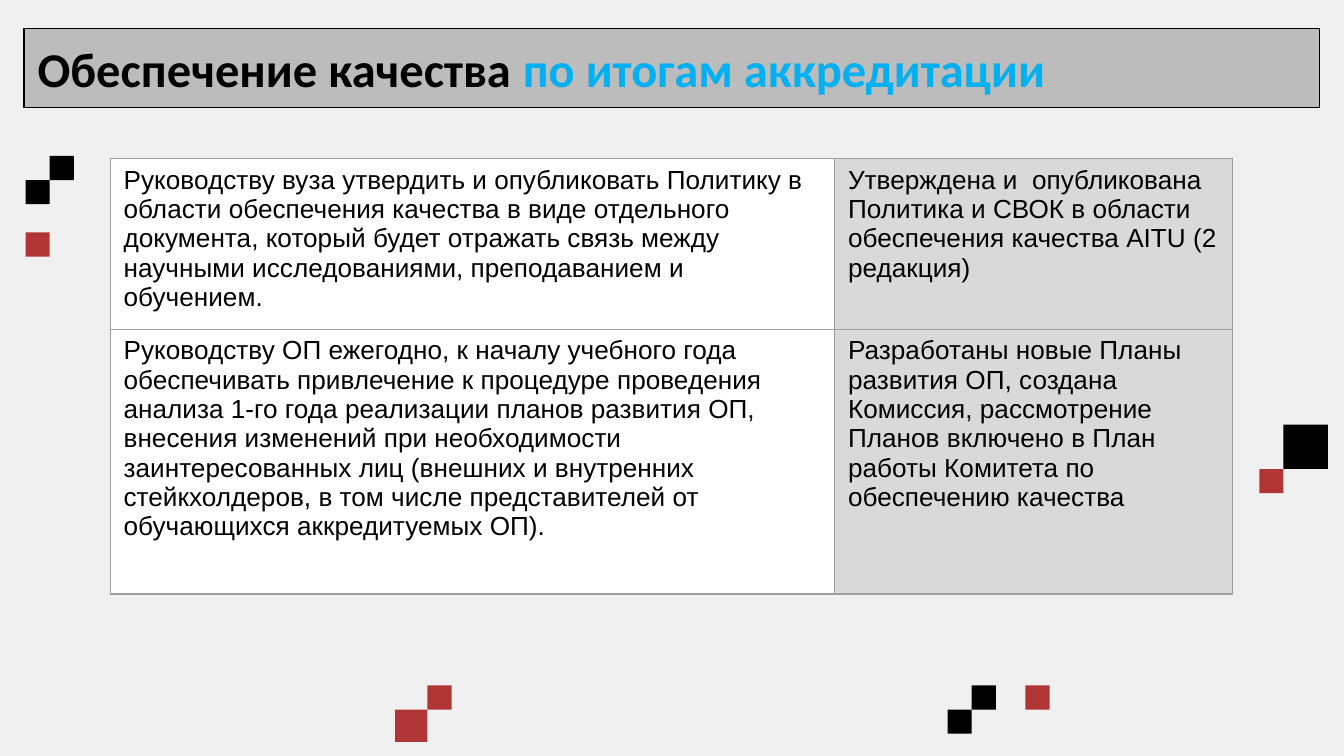
from typing import NamedTuple

from lxml import etree
from pptx import Presentation
from pptx import util as u
from pptx.dml.color import RGBColor
from pptx.enum import shapes, text
from pptx.oxml.ns import qn

EMU_PER_PX = 9144  # 100 px to the inch
COLORS = {
    "background": "F0F0F0",
    "black": "000000",
    "red": "B13535",
    "banner": "BCBCBC",
    "accent": "00B0F0",
    "recommendation": "FFFFFF",
    "result": "D9D9D9",
    "border": "9E9E9E",
}


class Square(NamedTuple):
    left: int
    top: int
    side: int
    color: str


class Run(NamedTuple):
    text: str
    color: str


class Row(NamedTuple):
    height: int
    recommendation: str
    result: str


SQUARES = [
    Square(318, 510, 18, "red"),
    Square(294, 528, 24, "red"),
    Square(705, 528, 18, "black"),
    Square(723, 510, 18, "black"),
    Square(763, 510, 18, "red"),
    Square(937, 349, 18, "red"),
    Square(955, 316, 33, "black"),
    Square(37, 116, 18, "black"),
    Square(19, 134, 18, "black"),
    Square(19, 173, 18, "red"),
]
TITLE = [
    Run("Обеспечение качества ", "black"),
    Run("по итогам аккредитации", "accent"),
]
COLUMNS = {"recommendation": 539, "result": 296}
ROWS = [
    Row(
        127,
        "Руководству вуза утвердить и опубликовать Политику в области "
        "обеспечения качества в виде отдельного документа, который будет "
        "отражать связь между научными исследованиями, преподаванием и "
        "обучением.",
        "Утверждена и  опубликована Политика и СВОК в области обеспечения "
        "качества AITU (2 редакция)",
    ),
    Row(
        197,
        "Руководству ОП ежегодно, к началу учебного года обеспечивать "
        "привлечение к процедуре проведения анализа 1-го года реализации "
        "планов развития ОП, внесения изменений при необходимости "
        "заинтересованных лиц (внешних и внутренних стейкхолдеров, в том "
        "числе представителей от обучающихся аккредитуемых ОП).",
        "Разработаны новые Планы  развития ОП, создана Комиссия, "
        "рассмотрение Планов включено в План работы Комитета по "
        "обеспечению качества",
    ),
]


def px(n: int) -> u.Emu:
    return u.Emu(n * EMU_PER_PX)


def rgb(name: str) -> RGBColor:
    return RGBColor.from_string(COLORS[name])


def set_fill(fill, color: str) -> None:
    fill.solid()
    fill.fore_color.rgb = rgb(color)


def add_run(p, run: Run, font: str, size: int, bold: bool = False) -> None:
    r = p.add_run()
    r.text = run.text
    r.font.name = font
    r.font.size = u.Pt(size)
    r.font.bold = bold
    r.font.color.rgb = rgb(run.color)


def add_square(s, square: Square) -> None:
    sp = s.shapes.add_shape(
        shapes.MSO_SHAPE.RECTANGLE,
        px(square.left), px(square.top), px(square.side), px(square.side),
    )
    sp.shadow.inherit = False
    set_fill(sp.fill, square.color)
    sp.line.fill.background()


def fill_title(sp, runs: list[Run]) -> None:
    sp.left, sp.top, sp.width, sp.height = px(18), px(21), px(964), px(59)
    set_fill(sp.fill, "banner")
    sp.line.color.rgb = rgb("black")
    sp.line.width = u.Pt(0.75)
    tf = sp.text_frame
    tf.word_wrap = True
    tf.auto_size = text.MSO_AUTO_SIZE.NONE
    tf.vertical_anchor = text.MSO_ANCHOR.MIDDLE
    tf.margin_left = tf.margin_right = tf.margin_top = tf.margin_bottom = px(10)
    p = tf.paragraphs[0]
    p.alignment = text.PP_ALIGN.LEFT
    for run in runs:
        add_run(p, run, "Calibri", 26, bold=True)


def add_borders(cell) -> None:
    """Outline a cell; must run before the cell gets its fill."""
    tc_pr = cell._tc.get_or_add_tcPr()
    for side in ("a:lnL", "a:lnR", "a:lnT", "a:lnB"):
        ln = etree.SubElement(tc_pr, qn(side), w=str(u.Pt(0.75)))
        solid = etree.SubElement(ln, qn("a:solidFill"))
        etree.SubElement(solid, qn("a:srgbClr"), val=COLORS["border"])


def add_results_table(s, rows: list[Row]) -> None:
    table = s.shapes.add_table(
        len(rows), len(COLUMNS), px(82), px(118),
        px(sum(COLUMNS.values())), px(sum(row.height for row in rows)),
    ).table
    table.first_row = table.horz_banding = False
    for column, width in zip(table.columns, COLUMNS.values()):
        column.width = px(width)
    for i, row in enumerate(rows):
        table.rows[i].height = px(row.height)
        for j, name in enumerate(COLUMNS):
            cell = table.cell(i, j)
            add_borders(cell)
            set_fill(cell.fill, name)
            p = cell.text_frame.paragraphs[0]
            add_run(p, Run(getattr(row, name), "black"), "Arial", 14)


def main() -> None:
    prs = Presentation()
    prs.slide_width = px(1000)
    prs.slide_height = prs.slide_width * 9 // 16
    s = prs.slides.add_slide(prs.slide_layouts.get_by_name("Title Only"))
    set_fill(s.background.fill, "background")
    for square in SQUARES:
        add_square(s, square)
    fill_title(s.shapes.title, TITLE)
    add_results_table(s, ROWS)
    prs.save("out.pptx")


if __name__ == "__main__":
    main()
